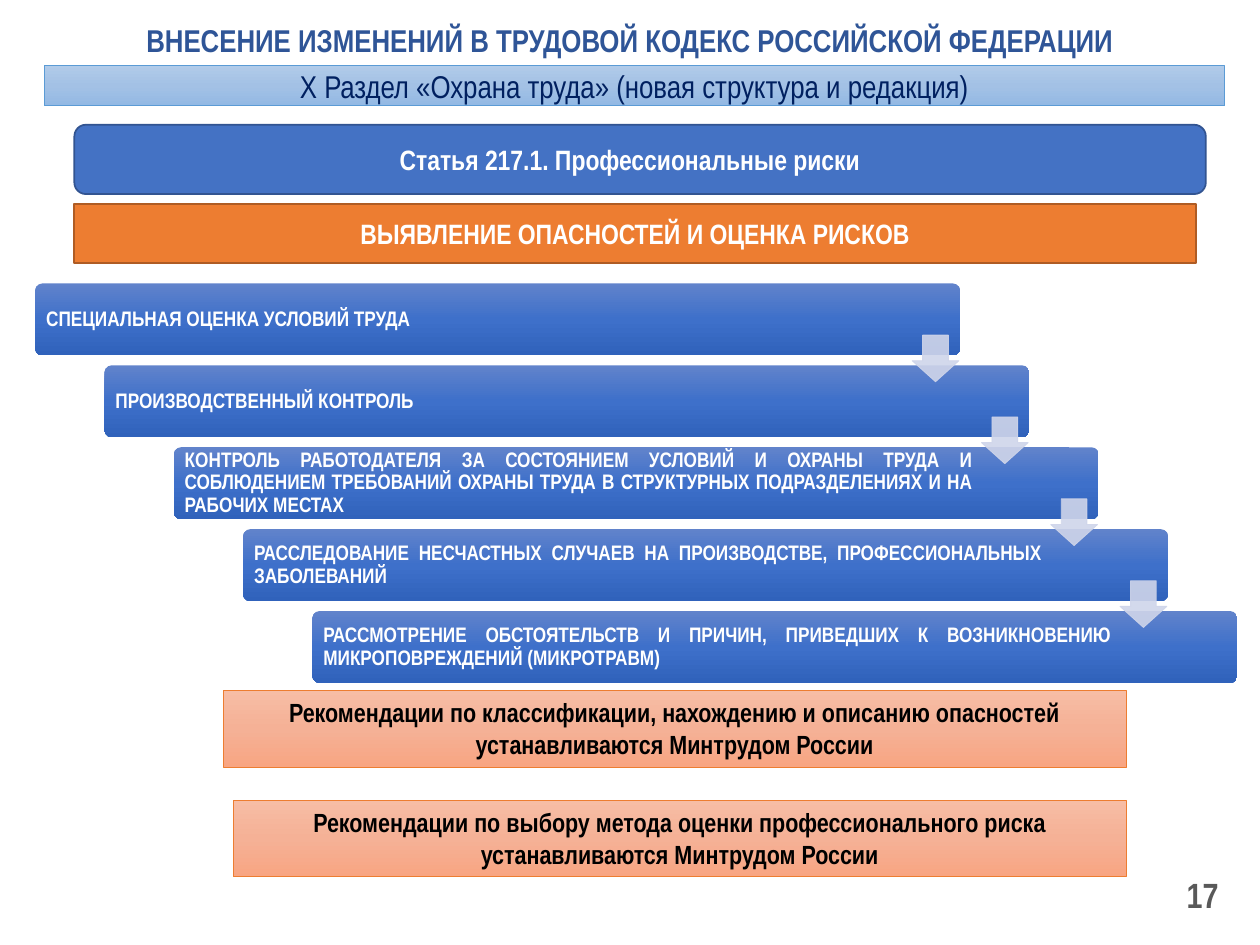
"""Build the slide on occupational risks in the Labour Code."""
from copy import deepcopy
from dataclasses import dataclass

from lxml import etree
from pptx import Presentation
from pptx.dml.color import RGBColor
from pptx.enum.shapes import MSO_SHAPE
from pptx.enum.text import MSO_ANCHOR, MSO_AUTO_SIZE, PP_ALIGN
from pptx.oxml.ns import qn
from pptx.util import Inches, Pt

RECT = MSO_SHAPE.RECTANGLE
ROUND = MSO_SHAPE.ROUNDED_RECTANGLE
ARROW = MSO_SHAPE.DOWN_ARROW
TOP, MIDDLE = MSO_ANCHOR.TOP, MSO_ANCHOR.MIDDLE
CENTER, RIGHT, JUSTIFY = PP_ALIGN.CENTER, PP_ALIGN.RIGHT, PP_ALIGN.JUSTIFY
NO_FIT = MSO_AUTO_SIZE.NONE

FONT = "Arial Narrow"
COLORS = {
    "title": "2F5597", "navy": "002060", "white": "FFFFFF", "black": "000000",
    "gray": "595959", "blue": "4472C4", "blue_line": "325491",
    "orange": "ED7D31", "orange_line": "AF5C24", "sky_line": "5B9BD5",
    "arrow": "CFD5EA",
    "sky_1": "B1CBE9", "sky_2": "A3C1E5", "sky_3": "93B9E4",
    "peach_1": "F7BDA5", "peach_2": "F5B196", "peach_3": "F8A582",
    "step_1": "6183CB", "step_2": "3E70CA", "step_3": "3062BB",
}
SKY = ("sky_1", "sky_2", "sky_3")
PEACH = ("peach_1", "peach_2", "peach_3")
STEP = ("step_1", "step_2", "step_3")

STEPS = [
    "СПЕЦИАЛЬНАЯ ОЦЕНКА УСЛОВИЙ ТРУДА",
    "ПРОИЗВОДСТВЕННЫЙ КОНТРОЛЬ",
    "КОНТРОЛЬ РАБОТОДАТЕЛЯ ЗА СОСТОЯНИЕМ УСЛОВИЙ И ОХРАНЫ ТРУДА И "
    "СОБЛЮДЕНИЕМ ТРЕБОВАНИЙ ОХРАНЫ ТРУДА В СТРУКТУРНЫХ ПОДРАЗДЕЛЕНИЯХ "
    "И НА РАБОЧИХ МЕСТАХ",
    "РАССЛЕДОВАНИЕ НЕСЧАСТНЫХ СЛУЧАЕВ НА ПРОИЗВОДСТВЕ, "
    "ПРОФЕССИОНАЛЬНЫХ ЗАБОЛЕВАНИЙ",
    "РАССМОТРЕНИЕ ОБСТОЯТЕЛЬСТВ И ПРИЧИН, ПРИВЕДШИХ К ВОЗНИКНОВЕНИЮ "
    "МИКРОПОВРЕЖДЕНИЙ (МИКРОТРАВМ)",
]
STEP_LEFT, STEP_TOP = 0.28, 2.25
STEP_DX, STEP_DY = 0.55, 0.65
ARROW_DX, ARROW_DY, ARROW_SIZE = 6.96, 0.41, 0.37


@dataclass
class Box:
    at: tuple[float, float, float, float]
    fill: tuple[str, ...]
    text: str = ""
    size: float = 16
    color: str = "white"
    line: str | None = None
    width: float = 0.5
    bold: bool = True
    shape: int = RECT
    adj: tuple[float, ...] = ()
    align: int = CENTER
    anchor: int = MIDDLE
    insets: tuple[float, float, float, float] = (0.1, 0.05, 0.1, 0.05)
    spacing: float = 1.0


BOXES = [
    Box((0.35, 0.52, 9.37, 0.32), SKY,
        "Х Раздел «Охрана труда» (новая структура и редакция)",
        18, "navy", "sky_line", bold=False),
    Box((0.59, 0.99, 8.98, 0.55), ("blue",),
        "Статья 217.1. Профессиональные риски",
        line="blue_line", width=1, shape=ROUND, insets=(0.1, 0.05, 0.26, 0.05)),
    Box((0.59, 1.62, 8.9, 0.47), ("orange",),
        "ВЫЯВЛЕНИЕ ОПАСНОСТЕЙ И ОЦЕНКА РИСКОВ", line="orange_line", width=1),
    Box((1.77, 5.48, 7.17, 0.61), PEACH,
        "Рекомендации по классификации, нахождению и описанию опасностей "
        "устанавливаются Минтрудом России",
        15, "black", "orange", anchor=TOP),
    Box((1.85, 6.35, 7.09, 0.61), PEACH,
        "Рекомендации по выбору метода оценки профессионального риска "
        "устанавливаются Минтрудом России",
        15, "black", "orange", anchor=TOP),
]


def rgb(name: str) -> RGBColor:
    return RGBColor.from_string(COLORS[name])


def write(s, text: str, size: float, color: str, align: int,
          bold: bool = True, anchor: int = MIDDLE) -> None:
    tf = s.text_frame
    tf.word_wrap = True
    tf.auto_size = NO_FIT
    tf.vertical_anchor = anchor
    p = tf.paragraphs[0]
    p.text = text
    p.alignment = align
    p.font.name = FONT
    p.font.size = Pt(size)
    p.font.bold = bold
    p.font.color.rgb = rgb(color)


def paint(s, names: tuple[str, ...]) -> None:
    if len(names) == 1:
        s.fill.solid()
        s.fill.fore_color.rgb = rgb(names[0])
        return
    s.fill.gradient()
    s.fill.gradient_angle = 270
    stops = s.element.xpath(".//a:gsLst")[0]
    stops.append(deepcopy(stops[0]))
    for i, (stop, name) in enumerate(zip(s.fill.gradient_stops, names)):
        stop.position = i / (len(names) - 1)
        stop.color.rgb = rgb(name)


def add_box(slide, box: Box):
    s = slide.shapes.add_shape(box.shape, *map(Inches, box.at))
    s.shadow.inherit = False
    for i, value in enumerate(box.adj):
        s.adjustments[i] = value
    paint(s, box.fill)
    if box.line:
        s.line.color.rgb = rgb(box.line)
        s.line.width = Pt(box.width)
    else:
        s.line.fill.background()
    if box.text:
        write(s, box.text, box.size, box.color, box.align, box.bold, box.anchor)
        tf = s.text_frame
        (tf.margin_left, tf.margin_top,
         tf.margin_right, tf.margin_bottom) = map(Inches, box.insets)
        tf.paragraphs[0].line_spacing = box.spacing
    return s


def add_step(slide, i: int, text: str) -> None:
    at = (STEP_LEFT + i * STEP_DX, STEP_TOP + i * STEP_DY, 7.34, 0.57)
    add_box(slide, Box(at, STEP, text, 12, shape=ROUND, adj=(0.1,),
                       align=JUSTIFY, insets=(0.07, 0, 0.98, 0), spacing=0.9))


def add_arrow(slide, i: int) -> None:
    at = (STEP_LEFT + ARROW_DX + i * STEP_DX,
          STEP_TOP + ARROW_DY + i * STEP_DY, ARROW_SIZE, ARROW_SIZE)
    s = add_box(slide, Box(at, ("arrow",), line="arrow", shape=ARROW,
                           adj=(0.55, 0.45)))
    for color in s.element.xpath(".//a:srgbClr"):
        etree.SubElement(color, qn("a:alpha")).set("val", "90000")


def main() -> None:
    prs = Presentation()
    prs.slide_width, prs.slide_height = Inches(10), Inches(7.5)
    slide = prs.slides.add_slide(prs.slide_layouts[5])

    title = slide.shapes.title
    title.left, title.top = Inches(0.75), Inches(0)
    title.width, title.height = Inches(8.5), Inches(0.63)
    write(title, "ВНЕСЕНИЕ ИЗМЕНЕНИЙ В ТРУДОВОЙ КОДЕКС РОССИЙСКОЙ ФЕДЕРАЦИИ",
          18, "title", CENTER)

    for box in BOXES:
        add_box(slide, box)
    for i, text in enumerate(STEPS):
        add_step(slide, i, text)
    for i in range(len(STEPS) - 1):
        add_arrow(slide, i)

    number = slide.shapes.add_textbox(*map(Inches, (7.44, 6.9, 2.33, 0.4)))
    write(number, "17", 20, "gray", RIGHT)
    prs.save("out.pptx")


if __name__ == "__main__":
    main()
